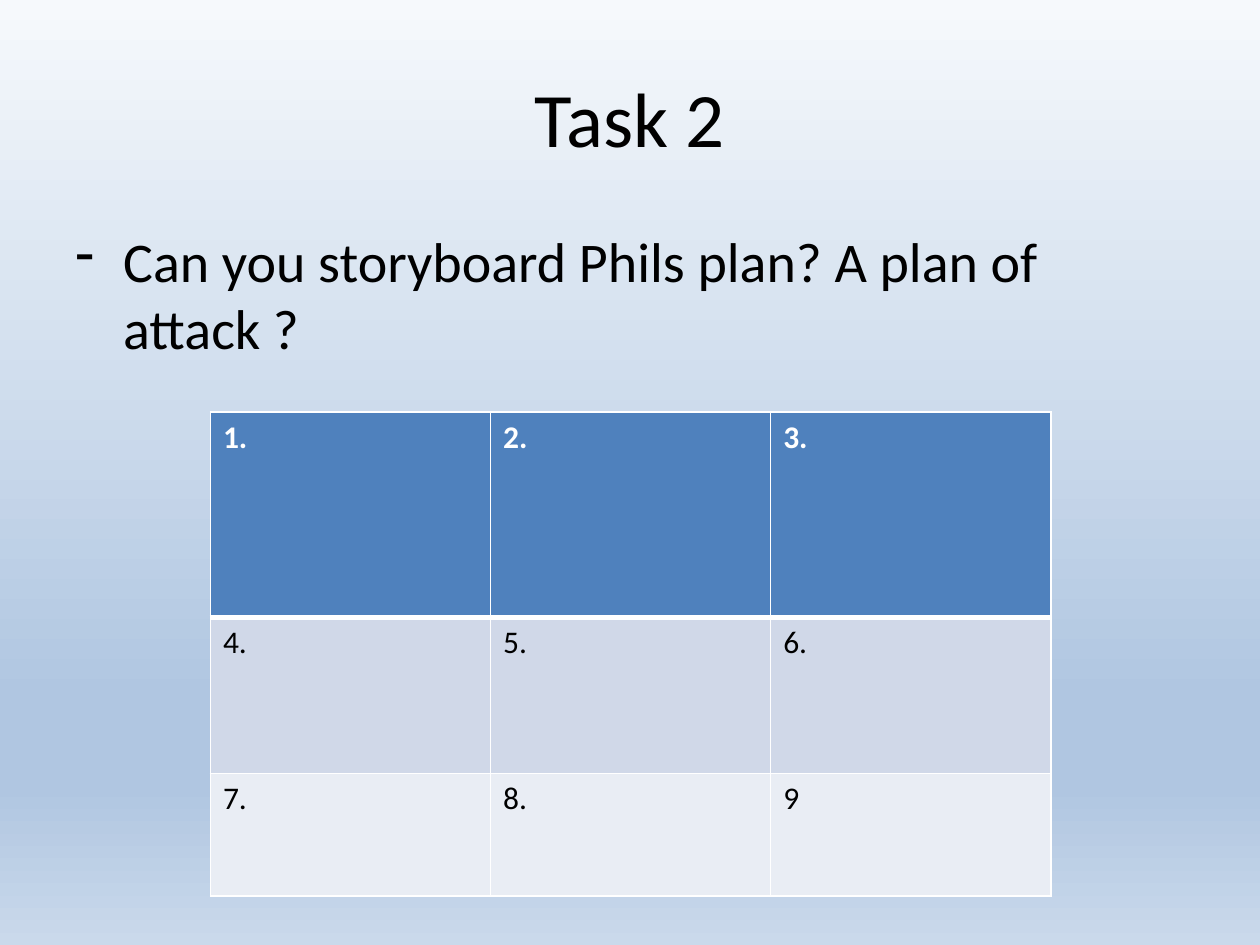
from typing import NamedTuple

from lxml import etree
from pptx import Presentation
from pptx.dml.color import RGBColor
from pptx.enum import text
from pptx.oxml.ns import qn
from pptx.util import Inches, Pt

FONT = "Calibri"
BLACK, WHITE = "000000", "FFFFFF"


class Stop(NamedTuple):
    percent: int
    color: str


class Row(NamedTuple):
    height: float
    labels: tuple
    fill: str
    color: str = BLACK
    bold: bool = False
    top: float = 1
    bottom: float = 1


BACKGROUND = [Stop(0, "F6F9FC"), Stop(74, "B0C6E1"), Stop(83, "B0C6E1"), Stop(100, "CAD9EB")]
STORYBOARD = [
    Row(1.63, ("1.", "2.", "3."), "4F81BD", WHITE, bold=True, bottom=3),
    Row(1.24, ("4.", "5.", "6."), "D0D8E8", top=3),
    Row(0.97, ("7.", "8.", "9"), "E9EDF4"),
]
COLUMN_WIDTH = 6.67 / 3


def rgb(color: str) -> RGBColor:
    return RGBColor.from_string(color)


def write(frame, content: str, *, size: float, color: str = BLACK, bold: bool = False,
          align=text.PP_ALIGN.LEFT, anchor=text.MSO_ANCHOR.TOP):
    frame.word_wrap = True
    frame.vertical_anchor = anchor
    para = frame.paragraphs[0]
    para.alignment = align
    span = para.add_run()
    span.text = content
    font = span.font
    font.name, font.size, font.bold = FONT, Pt(size), bold
    font.color.rgb = rgb(color)
    return para


def paint_background(slide, stops: list) -> None:
    fill = slide.background.fill
    fill.gradient()
    fill.gradient_angle = 270
    stop_list = next(slide.element.iter(qn("a:gsLst")))
    for child in list(stop_list):
        stop_list.remove(child)
    for stop in stops:
        mark = etree.SubElement(stop_list, qn("a:gs"), pos=str(stop.percent * 1000))
        etree.SubElement(mark, qn("a:srgbClr"), val=stop.color)


def add_dash(para, indent: float) -> None:
    """Give the paragraph a hanging dash bullet."""
    props = para._p.get_or_add_pPr()
    props.set("marL", str(Inches(indent)))
    props.set("indent", str(-Inches(indent)))
    etree.SubElement(props, qn("a:buFontTx"))
    etree.SubElement(props, qn("a:buChar"), char="-")


def add_borders(cell, top: float, bottom: float) -> None:
    props = cell._tc.get_or_add_tcPr()
    for side, width in (("L", 1), ("R", 1), ("T", top), ("B", bottom)):
        line = etree.SubElement(props, qn(f"a:ln{side}"), w=str(Pt(width)))
        solid = etree.SubElement(line, qn("a:solidFill"))
        etree.SubElement(solid, qn("a:srgbClr"), val=WHITE)


def add_storyboard(slide, rows: list, left: float, top: float) -> None:
    columns = len(rows[0].labels)
    table = slide.shapes.add_table(
        len(rows), columns, Inches(left), Inches(top),
        Inches(columns * COLUMN_WIDTH), Inches(sum(row.height for row in rows))).table
    for column in table.columns:
        column.width = Inches(COLUMN_WIDTH)
    for index, row in enumerate(rows):
        table.rows[index].height = Inches(row.height)
        for cell, label in zip(table.rows[index].cells, row.labels):
            add_borders(cell, row.top, row.bottom)
            cell.fill.solid()
            cell.fill.fore_color.rgb = rgb(row.fill)
            write(cell.text_frame, label, size=18, color=row.color, bold=row.bold)


def main() -> None:
    deck = Presentation()
    deck.slide_width, deck.slide_height = Inches(10), Inches(7.5)
    slide = deck.slides.add_slide(deck.slide_layouts[5])
    paint_background(slide, BACKGROUND)

    title = slide.shapes.title
    title.left, title.top = Inches(0.5), Inches(0.3)
    title.width, title.height = Inches(9), Inches(1.25)
    write(title.text_frame, "Task 2", size=44, align=text.PP_ALIGN.CENTER,
          anchor=text.MSO_ANCHOR.MIDDLE)

    body = slide.shapes.add_textbox(Inches(0.5), Inches(1.75), Inches(9), Inches(5.75))
    question = write(body.text_frame, "Can you storyboard Phils plan? A plan of attack ?", size=32)
    question.space_before = Pt(6.4)
    add_dash(question, 0.38)

    add_storyboard(slide, STORYBOARD, left=1.67, top=3.27)
    deck.save("out.pptx")


if __name__ == "__main__":
    main()
